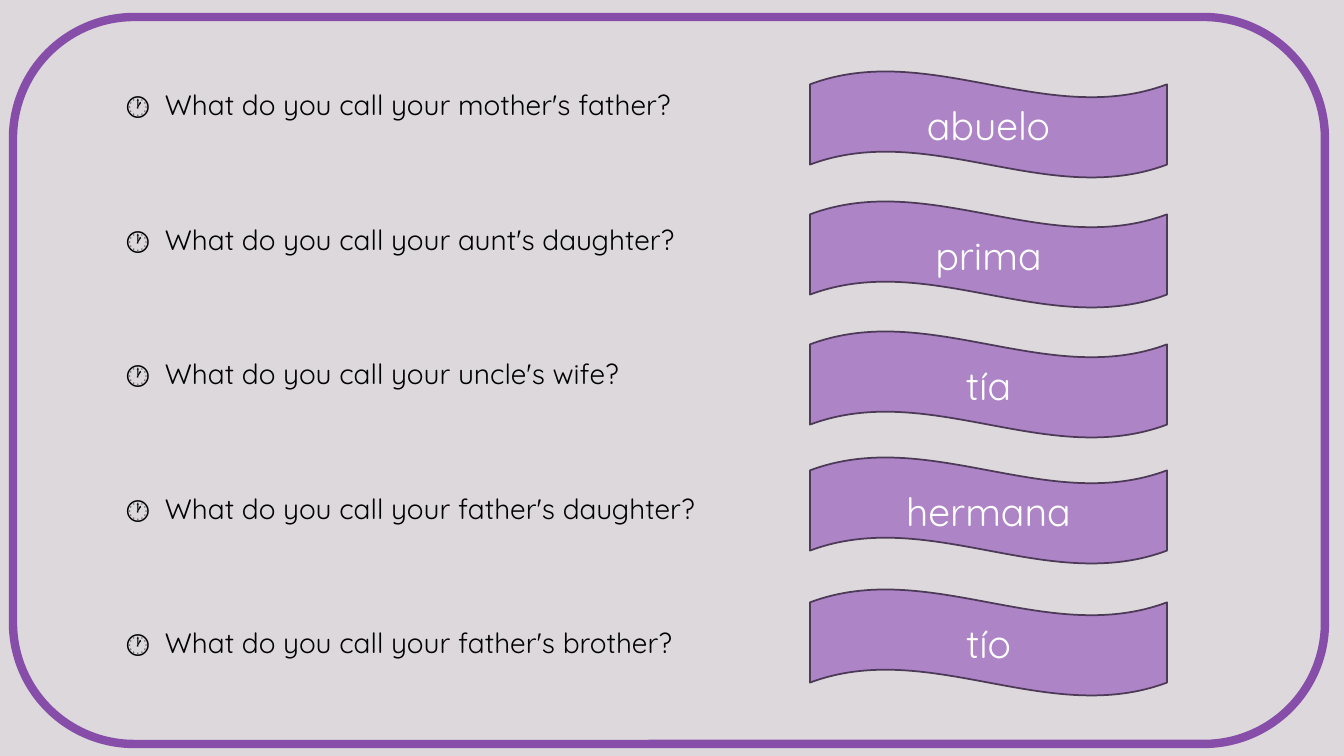
from lxml import etree
from pptx import Presentation
from pptx.dml.color import RGBColor
from pptx.enum.shapes import MSO_SHAPE
from pptx.enum.text import MSO_ANCHOR, PP_ALIGN
from pptx.oxml.ns import qn
from pptx.util import Pt

# Content: question, answer, top of the answer's banner in px
FAMILY_QUIZ = [
    ("What do you call your mother's father?", "abuelo", 71),
    ("What do you call your aunt's daughter?", "prima", 201),
    ("What do you call your uncle's wife?", "tía", 331),
    ("What do you call your father's daughter?", "hermana", 457),
    ("What do you call your father's brother?", "tío", 589),
]
CLOCK = "🕐"
FONT = "Quicksand"

BACKGROUND = RGBColor(0xDC, 0xD8, 0xDC)
FRAME_PURPLE = RGBColor(0x87, 0x4E, 0xA9)
BANNER_FILL = RGBColor(0xAD, 0x84, 0xC6)
BANNER_LINE = RGBColor(0x4C, 0x3A, 0x57)
WHITE = RGBColor(0xFF, 0xFF, 0xFF)
BLACK = RGBColor(0x00, 0x00, 0x00)

ROUNDED = MSO_SHAPE.ROUNDED_RECTANGLE
WAVE = MSO_SHAPE.WAVE
MIDDLE = MSO_ANCHOR.MIDDLE
CENTER = PP_ALIGN.CENTER

EMU_PER_PX = 914400 / 100.8
BANNER_LEFT, BANNER_WIDTH, BANNER_HEIGHT = 810, 357, 107
QUESTION_TAB = 39
LINE_HEIGHT, QUESTION_PITCH = 24, 96  # points


def px(length):
    return round(length * EMU_PER_PX)


def box(*lengths):
    return [px(length) for length in lengths]


def style_text(paragraph, size, color):
    paragraph.font.name = FONT
    paragraph.font.size = Pt(size)
    paragraph.font.color.rgb = color


def add_tab_stop(paragraph, position):
    tab_list = etree.Element(qn("a:tabLst"))
    etree.SubElement(tab_list, qn("a:tab"), pos=str(px(position)), algn="l")
    properties = paragraph._p.get_or_add_pPr()
    properties.find(qn("a:defRPr")).addprevious(tab_list)


def add_outlined(kind, bounds, color, width):
    shape = slide.shapes.add_shape(kind, *box(*bounds))
    shape.shadow.inherit = False
    shape.line.color.rgb = color
    shape.line.width = Pt(width)
    return shape


prs = Presentation()
prs.slide_width, prs.slide_height = box(1344, 756)
slide = prs.slides.add_slide(prs.slide_layouts[6])
slide.background.fill.solid()
slide.background.fill.fore_color.rgb = BACKGROUND

# Questions
questions = slide.shapes.add_textbox(*box(116, 83, 680, 648)).text_frame
questions.word_wrap = True
for number, (question, _, _) in enumerate(FAMILY_QUIZ):
    line = questions.add_paragraph() if number else questions.paragraphs[0]
    line.text = f"{CLOCK}\t{question}"
    line.line_spacing = Pt(LINE_HEIGHT)
    line.space_after = Pt(QUESTION_PITCH - LINE_HEIGHT)
    style_text(line, 20, BLACK)
    add_tab_stop(line, QUESTION_TAB)

# Frame around the slide
frame = add_outlined(ROUNDED, (13, 17, 1312, 727), FRAME_PURPLE, 6)
frame.fill.background()

# Answer banners
for _, answer, top in FAMILY_QUIZ:
    bounds = (BANNER_LEFT, top, BANNER_WIDTH, BANNER_HEIGHT)
    banner = add_outlined(WAVE, bounds, BANNER_LINE, 1.25)
    banner.fill.solid()
    banner.fill.fore_color.rgb = BANNER_FILL
    banner.text_frame.vertical_anchor = MIDDLE
    label = banner.text_frame.paragraphs[0]
    label.text = answer
    label.alignment = CENTER
    style_text(label, 28, WHITE)

prs.save("out.pptx")
